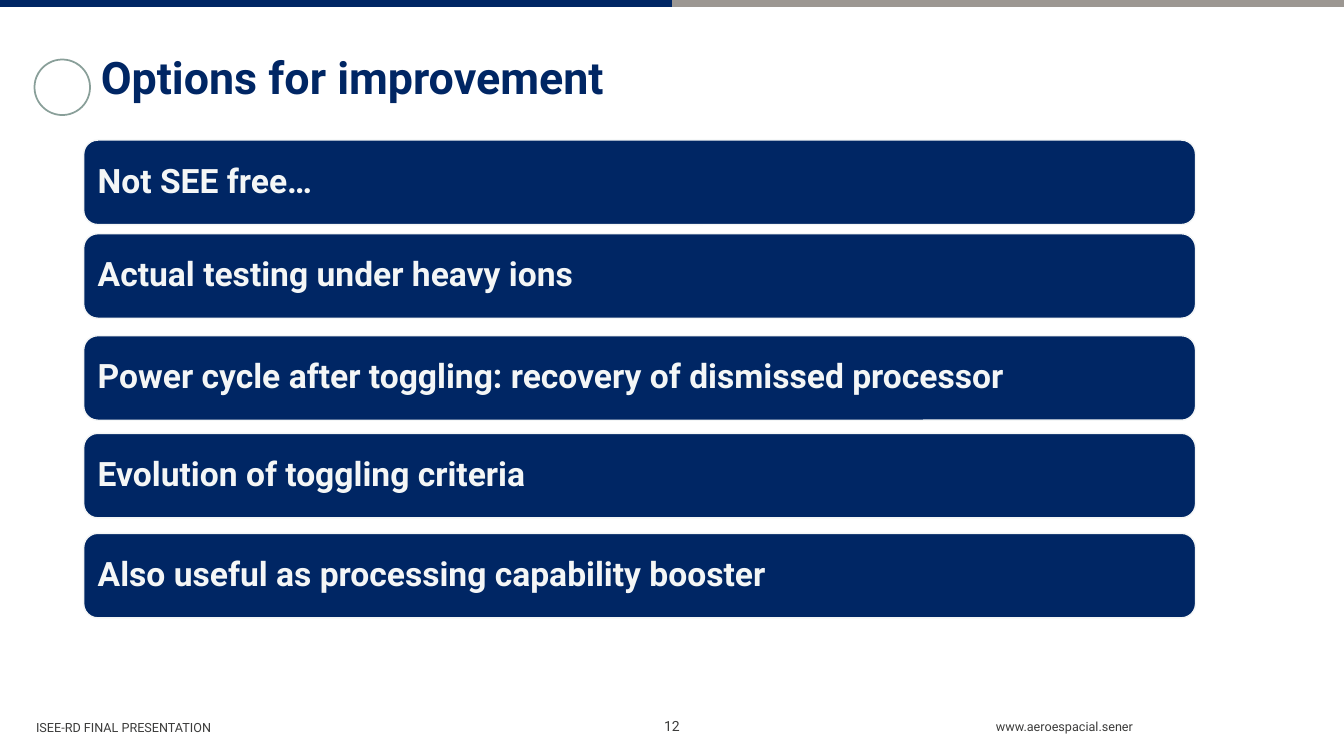
from pptx import Presentation
from pptx import util as u
from pptx.dml.color import RGBColor
from pptx.enum import shapes, text
from pptx.oxml.ns import qn
from lxml import etree

COLORS = {
    "navy": "002664",
    "taupe": "9C9792",
    "sage": "899F99",
    "charcoal": "3C3C3B",
    "mist": "F4F6F6",
}
WIDTH, HEIGHT = 33.87, 19.05
OPTIONS = [
    (3.53, "Not SEE free…"),
    (5.89, "Actual testing under heavy ions"),
    (8.46, "Power cycle after toggling: recovery of dismissed processor"),
    (10.92, "Evolution of toggling criteria"),
    (13.44, "Also useful as processing capability booster"),
]


class SlideBuilder:
    """Places styled elements on one slide; lengths are in centimetres."""

    font = "Roboto"

    def __init__(self, slide):
        self.shapes = slide.shapes

    @staticmethod
    def color(name):
        return RGBColor.from_string(COLORS[name])

    def set_text(self, frame, words, size, color, bold=False,
                 align=text.PP_ALIGN.LEFT, anchor=text.MSO_ANCHOR.MIDDLE,
                 inset=0, wrap=True):
        frame.margin_left = frame.margin_right = u.Cm(inset)
        frame.margin_top = frame.margin_bottom = 0
        frame.word_wrap = wrap
        frame.vertical_anchor = anchor
        paragraph = frame.paragraphs[0]
        paragraph.text = words
        paragraph.alignment = align
        font = paragraph.font
        font.name, font.size, font.bold = self.font, u.Pt(size), bold
        font.color.rgb = self.color(color)

    def label(self, box, words, size, color, **style):
        frame = self.shapes.add_textbox(*map(u.Cm, box)).text_frame
        self.set_text(frame, words, size, color, **style)

    def bar(self, start, end, y, color):
        rule = self.shapes.add_connector(
            shapes.MSO_CONNECTOR.STRAIGHT,
            u.Cm(start), u.Cm(y), u.Cm(end), u.Cm(y))
        rule.line.color.rgb = self.color(color)
        rule.line.width = u.Pt(5.5)
        properties = rule._element.find(qn("p:spPr"))
        etree.SubElement(properties, qn("a:effectLst"))

    def ring(self, box, color):
        mark = self.shapes.add_shape(shapes.MSO_SHAPE.OVAL, *map(u.Cm, box))
        mark.shadow.inherit = False
        mark.fill.background()
        mark.line.color.rgb = self.color(color)
        mark.line.width = u.Pt(1.25)

    def option(self, top, words):
        panel = self.shapes.add_shape(
            shapes.MSO_SHAPE.ROUNDED_RECTANGLE,
            u.Cm(2.11), u.Cm(top), u.Cm(28.02), u.Cm(2.13))
        panel.shadow.inherit = False
        panel.fill.solid()
        panel.fill.fore_color.rgb = self.color("navy")
        panel.line.color.rgb = self.color("mist")
        panel.line.width = u.Pt(1)
        # The rounded corners already add a little to the inset.
        self.set_text(panel.text_frame, words, 24, "mist", bold=True,
                      inset=0.25)
        panel.text_frame.paragraphs[0].line_spacing = 0.9


def main():
    deck = Presentation()
    deck.slide_width, deck.slide_height = u.Cm(WIDTH), u.Cm(HEIGHT)
    page = SlideBuilder(deck.slides.add_slide(deck.slide_layouts[6]))

    page.bar(0, WIDTH / 2, 0.08, "navy")
    page.bar(WIDTH / 2, WIDTH, 0.08, "taupe")

    page.label((0.91, 18.13, 15.3, 0.38), "ISEE-RD FINAL PRESENTATION",
               9, "charcoal")
    page.label((15.55, 18.08, 2.77, 0.43), "12", 10, "charcoal",
               align=text.PP_ALIGN.CENTER, anchor=text.MSO_ANCHOR.TOP)
    page.label((25.02, 18.12, 3.53, 0.38), "www.aeroespacial.sener",
               9, "charcoal", align=text.PP_ALIGN.RIGHT, wrap=False)

    page.ring((0.87, 1.5, 1.4, 1.4), "sage")
    page.label((2.54, 1.22, 16.84, 1.4), "Options for improvement",
               32, "navy", bold=True, anchor=text.MSO_ANCHOR.BOTTOM)

    for top, words in OPTIONS:
        page.option(top, words)

    deck.save("out.pptx")


if __name__ == "__main__":
    main()
